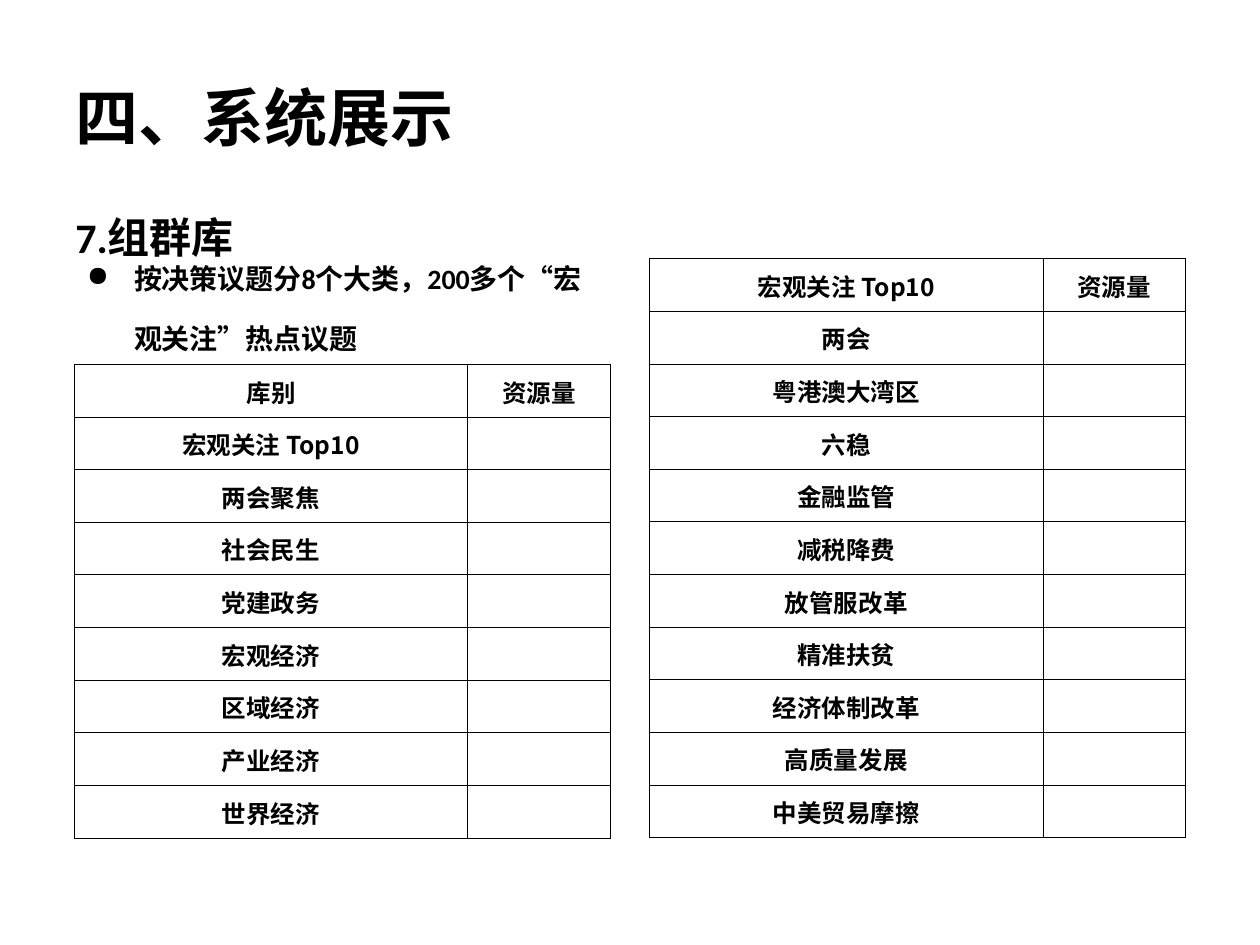
import pptx
import pptx.util
import pptx.dml.color
import pptx.enum.text
import pptx.oxml
import pptx.oxml.ns
from lxml import etree

Pt = pptx.util.Pt
ALIGN = pptx.enum.text.PP_ALIGN
ANCHOR = pptx.enum.text.MSO_ANCHOR
COLORS = {"text": "000000", "border": "000000"}
TABLE_FONT = "Noto Sans CJK SC"


def write(frame, text, size, font="Calibri", align=ALIGN.LEFT,
          spacing=None, hanging=0, bullet=None):
    """Fill the first paragraph of a text frame with bold text."""
    para = frame.paragraphs[0]
    para.alignment = align
    if spacing:
        para.line_spacing = spacing
    para.space_before = Pt(0)
    if hanging:
        properties = para._p.get_or_add_pPr()
        properties.set("marL", str(Pt(hanging)))
        properties.set("indent", str(-Pt(hanging)))
        if bullet:
            mark = etree.SubElement(properties, pptx.oxml.ns.qn("a:buChar"))
            mark.set("char", bullet)
    span = para.add_run()
    span.text = text
    span.font.name = font
    span.font.size = Pt(size)
    span.font.bold = True
    span.font.color.rgb = pptx.dml.color.RGBColor.from_string(COLORS["text"])


def add_borders(cell, width):
    """Draw a thin line on all four sides of a cell."""
    properties = cell._tc.get_or_add_tcPr()
    for side in ("lnL", "lnR", "lnT", "lnB"):
        properties.append(pptx.oxml.parse_xml(
            f'<a:{side} {pptx.oxml.ns.nsdecls("a")} w="{Pt(width)}"><a:solidFill>'
            f'<a:srgbClr val="{COLORS["border"]}"/></a:solidFill></a:{side}>'))


deck = pptx.Presentation()
deck.slide_width, deck.slide_height = Pt(720), Pt(540)
page = deck.slides.add_slide(deck.slide_layouts[5])

# Title
title = page.shapes.title
title.left, title.top, title.width, title.height = Pt(36), Pt(21.6), Pt(648), Pt(90)
title.text_frame.vertical_anchor = ANCHOR.MIDDLE
write(title.text_frame, "四、系统展示", 36)

# Section heading and bullet
for text, place, style in (
    ("7.组群库", (36, 88.6, 199.4, 67.7), dict(size=24, spacing=2)),
    ("按决策议题分8个大类，200多个“宏观关注”热点议题", (42.5, 130.3, 306, 77),
     dict(size=16, spacing=1.8, hanging=27, bullet="●")),
):
    box = page.shapes.add_textbox(*(Pt(value) for value in place))
    box.text_frame.word_wrap = True
    write(box.text_frame, text, **style)

# Tables: name column filled, amount column empty below its heading
ROW_HEIGHT = 30.08
COLUMN_WIDTHS = (224.8, 81.4)
TABLES = (
    (42.5, 208.2, ("库别", "宏观关注 Top10", "两会聚焦", "社会民生", "党建政务",
                   "宏观经济", "区域经济", "产业经济", "世界经济")),
    (371.2, 147.8, ("宏观关注 Top10", "两会", "粤港澳大湾区", "六稳", "金融监管",
                    "减税降费", "放管服改革", "精准扶贫", "经济体制改革",
                    "高质量发展", "中美贸易摩擦")),
)
for left, top, names in TABLES:
    table = page.shapes.add_table(
        len(names), 2, Pt(left), Pt(top), Pt(sum(COLUMN_WIDTHS)),
        Pt(ROW_HEIGHT * len(names))).table
    table.first_row = table.horz_banding = False
    for column, width in zip(table.columns, COLUMN_WIDTHS):
        column.width = Pt(width)
    for index, name in enumerate(names):
        table.rows[index].height = Pt(ROW_HEIGHT)
        for number, text in enumerate((name, "资源量" if index == 0 else "")):
            cell = table.cell(index, number)
            cell.vertical_anchor = ANCHOR.MIDDLE
            cell.margin_left = cell.margin_right = cell.margin_top = Pt(0.7)
            cell.margin_bottom = Pt(0)
            add_borders(cell, 0.5)
            cell.fill.background()
            if text:
                write(cell.text_frame, text, 14, font=TABLE_FONT, align=ALIGN.CENTER)

deck.save("out.pptx")
